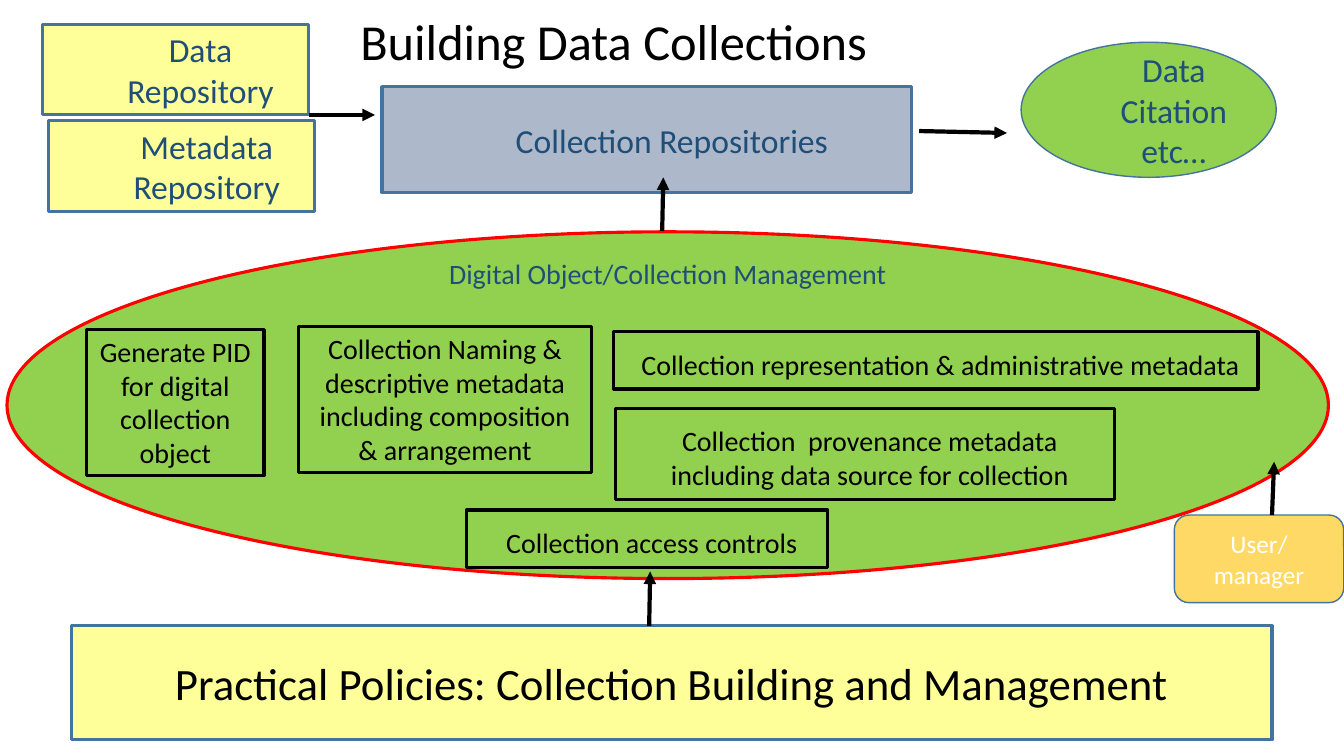
from lxml import etree
from pptx import Presentation
from pptx.dml.color import RGBColor
from pptx.enum.shapes import MSO_CONNECTOR, MSO_SHAPE
from pptx.enum.text import MSO_ANCHOR, PP_ALIGN
from pptx.oxml.ns import qn
from pptx.util import Pt

RECT, OVAL, ROUND = MSO_SHAPE.RECTANGLE, MSO_SHAPE.OVAL, MSO_SHAPE.ROUNDED_RECTANGLE
STRAIGHT = MSO_CONNECTOR.STRAIGHT
CENTER = PP_ALIGN.CENTER
TOP, MIDDLE = MSO_ANCHOR.TOP, MSO_ANCHOR.MIDDLE

BLACK = RGBColor(0x00, 0x00, 0x00)
WHITE = RGBColor(0xFF, 0xFF, 0xFF)
NAVY = RGBColor(0x1F, 0x4E, 0x79)
STEEL = RGBColor(0x43, 0x73, 0x9E)
RED = RGBColor(0xFF, 0x00, 0x00)
GREEN = RGBColor(0x92, 0xD0, 0x50)
YELLOW = RGBColor(0xFF, 0xFF, 0x99)
GREY = RGBColor(0xAD, 0xB9, 0xCA)
GOLD = RGBColor(0xFF, 0xD9, 0x66)


class Diagram:
    """Shared style and drawing methods for one slide; lengths in points."""

    font = "Calibri"

    def __init__(self, slide):
        self.slide = slide
        self.shapes = slide.shapes

    def set_text(self, sp, text, size, color, anchor=MIDDLE, level=0):
        tf = sp.text_frame
        tf.word_wrap = True
        tf.vertical_anchor = anchor
        tf.text = text
        for p in tf.paragraphs:
            p.alignment = CENTER
            p.level = level
            for r in p.runs:
                r.font.name = self.font
                r.font.size = Pt(size)
                r.font.color.rgb = color
        return tf

    def title(self, text, box):
        sp = self.shapes.title
        sp.left, sp.top, sp.width, sp.height = (Pt(v) for v in box)
        tf = self.set_text(sp, text, 36, BLACK)
        tf.paragraphs[0].line_spacing = 0.9

    def label(self, text, box, size, color):
        sp = self.shapes.add_textbox(*(Pt(v) for v in box))
        self.set_text(sp, text, size, color)

    def shape(self, kind, box, fill, line=STEEL, width=2.25):
        sp = self.shapes.add_shape(kind, *(Pt(v) for v in box))
        sp.shadow.inherit = False
        if fill is None:
            sp.fill.background()
        else:
            sp.fill.solid()
            sp.fill.fore_color.rgb = fill
        sp.line.color.rgb = line
        sp.line.width = Pt(width)
        return sp

    def store(self, kind, text, box, fill, width=2.25):
        sp = self.shape(kind, box, fill, width=width)
        self.set_text(sp, text, 24, NAVY, level=1)

    def task(self, text, box, left=7.2, top=3.6):
        sp = self.shape(RECT, box, None, BLACK)
        tf = self.set_text(sp, text, 20, BLACK, TOP)
        tf.margin_left, tf.margin_top = Pt(left), Pt(top)

    def arrow(self, x1, y1, x2, y2):
        c = self.shapes.add_connector(STRAIGHT, Pt(x1), Pt(y1), Pt(x2), Pt(y2))
        c.line.color.rgb = BLACK
        c.line.width = Pt(3)
        props = c._element.spPr
        etree.SubElement(props.find(qn("a:ln")), qn("a:tailEnd"), type="triangle")
        etree.SubElement(props, qn("a:effectLst"))


def main():
    prs = Presentation()
    prs.slide_width, prs.slide_height = Pt(960), Pt(540)
    d = Diagram(prs.slides.add_slide(prs.slide_layouts[5]))

    # Title
    d.title("Building Data Collections", (24.5, 2.9, 828, 56.9))

    # Management ellipse with its heading
    d.shape(OVAL, (5, 165.6, 943.9, 247.7), GREEN, RED)
    d.label("Digital Object/Collection Management", (277, 178, 400, 34), 20, NAVY)

    # Repositories and output
    d.store(RECT, "Data Repository", (30.2, 17.3, 190.1, 64.8), YELLOW)
    d.store(RECT, "Metadata Repository", (34.6, 86.4, 190.1, 64.8), YELLOW)
    d.store(RECT, "Collection Repositories", (272.9, 61.9, 378, 75.6), GREY)
    d.store(OVAL, "Data Citation\vetc…", (729.4, 30.2, 182.2, 96.5), GREEN, 1)

    # Management tasks
    d.task("Generate PID for digital collection object", (61.9, 235.4, 126.7, 104.4))
    d.task("Collection Naming & descriptive metadata including composition "
           "& arrangement", (213.1, 233.3, 209.5, 104.4))
    for text, box in (
        ("Collection representation & administrative metadata",
         (438.5, 236.9, 460.1, 41)),
        ("Collection  provenance metadata\vincluding data source for collection",
         (439.9, 291.6, 356.4, 65.5)),
        ("Collection access controls", (333.4, 364.3, 257.8, 41)),
    ):
        d.task(text, box, left=13.5, top=11.2)

    # Policies and user
    policies = d.shape(RECT, (51.1, 447.1, 857.5, 81.4), YELLOW)
    d.set_text(policies, "Practical Policies: Collection Building and Management", 32, BLACK)
    user = d.shape(ROUND, (838.8, 367.9, 121, 62.6), GOLD, width=1)
    d.set_text(user, "User/\nmanager", 18, WHITE)

    # Arrows
    for ends in (
        (463.7, 447.1, 464.4, 408.2),
        (473, 164.9, 473.8, 126.7),
        (221, 82.1, 267.8, 82.1),
        (656.6, 93.6, 719.3, 95),
        (908.6, 367.9, 910.1, 329.8),
    ):
        d.arrow(*ends)

    prs.save("out.pptx")


if __name__ == "__main__":
    main()
